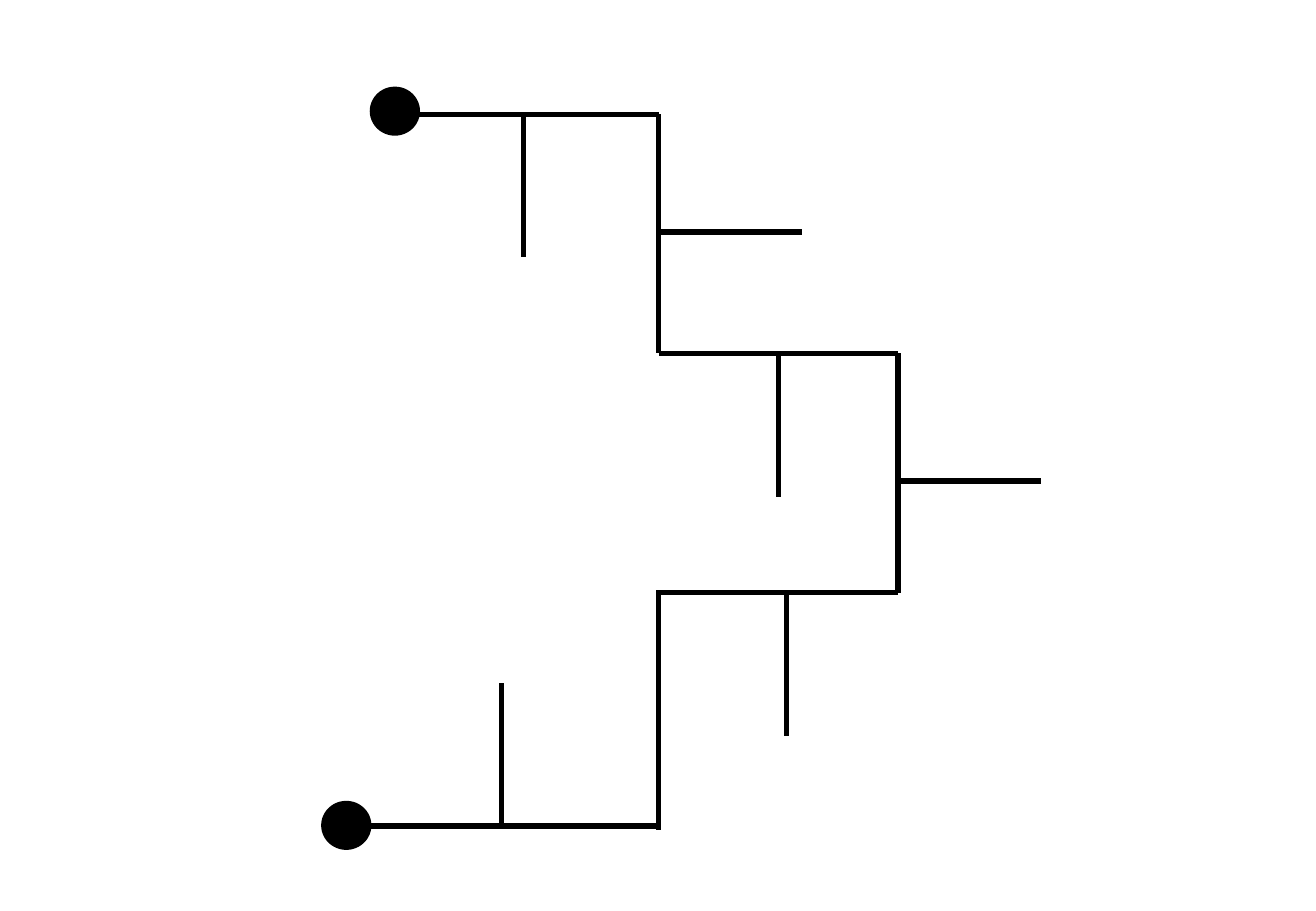
from lxml import etree
from pptx import Presentation
from pptx.dml.color import RGBColor
from pptx.enum.shapes import MSO_CONNECTOR, MSO_SHAPE
from pptx.oxml.ns import qn
from pptx.util import Inches, Pt

STRAIGHT = MSO_CONNECTOR.STRAIGHT
NODE = MSO_SHAPE.FLOWCHART_CONNECTOR
COLORS = {"ink": "000000"}
INK = RGBColor.from_string(COLORS["ink"])

SIDE = 1.97    # length of one step of the path
BRANCH = 1.18  # length of one side branch
NODE_SIZE = (0.4, 0.39)


def add_line(shapes, x, y, dx, dy):
    """Draw a line from (x, y) that runs dx across and dy down."""
    line = shapes.add_connector(
        STRAIGHT, Inches(x), Inches(y), Inches(x + dx), Inches(y + dy))
    line.line.color.rgb = INK
    line.line.width = Pt(3)
    etree.SubElement(line._element.spPr, qn("a:effectLst"))


def add_node(shapes, x, y):
    width, height = NODE_SIZE
    node = shapes.add_shape(
        NODE, Inches(x), Inches(y), Inches(width), Inches(height))
    node.shadow.inherit = False
    node.fill.solid()
    node.fill.fore_color.rgb = INK
    node.line.color.rgb = INK
    node.line.width = Pt(1)


def draw_chain(slide, left, top):
    """Draw the stepped chain in a box whose corner is (left, top)."""
    shapes = slide.shapes.add_group_shape().shapes
    inner = left + 2.77
    outer = inner + SIDE
    first = top + 0.22
    second = first + SIDE
    third = second + SIDE
    last = top + 6.08

    path = [
        (left + 0.8, first, SIDE, 0),
        (inner, first, 0, SIDE),
        (inner, second, SIDE, 0),
        (outer, second, 0, SIDE),
        (inner, third, SIDE, 0),
        (inner, third - 0.02, 0, SIDE),
        (left + 0.4, last, 2.36, 0),
    ]
    branches = [
        (left + 1.66, first, 0, BRANCH),
        (inner, top + 1.19, BRANCH, 0),
        (left + 3.76, second, 0, BRANCH),
        (outer, top + 3.24, BRANCH, 0),
        (left + 3.82, third, 0, BRANCH),
        (left + 1.48, last, 0, -BRANCH),
    ]
    for x, y in ((left + 0.4, top), (left, top + 5.88)):
        add_node(shapes, x, y)
    for segment in path + branches:
        add_line(shapes, *segment)


def main():
    presentation = Presentation()
    presentation.slide_width = Inches(10.83)
    presentation.slide_height = Inches(7.5)
    slide = presentation.slides.add_slide(presentation.slide_layouts[6])
    draw_chain(slide, 2.65, 0.72)
    presentation.save("out.pptx")


if __name__ == "__main__":
    main()
